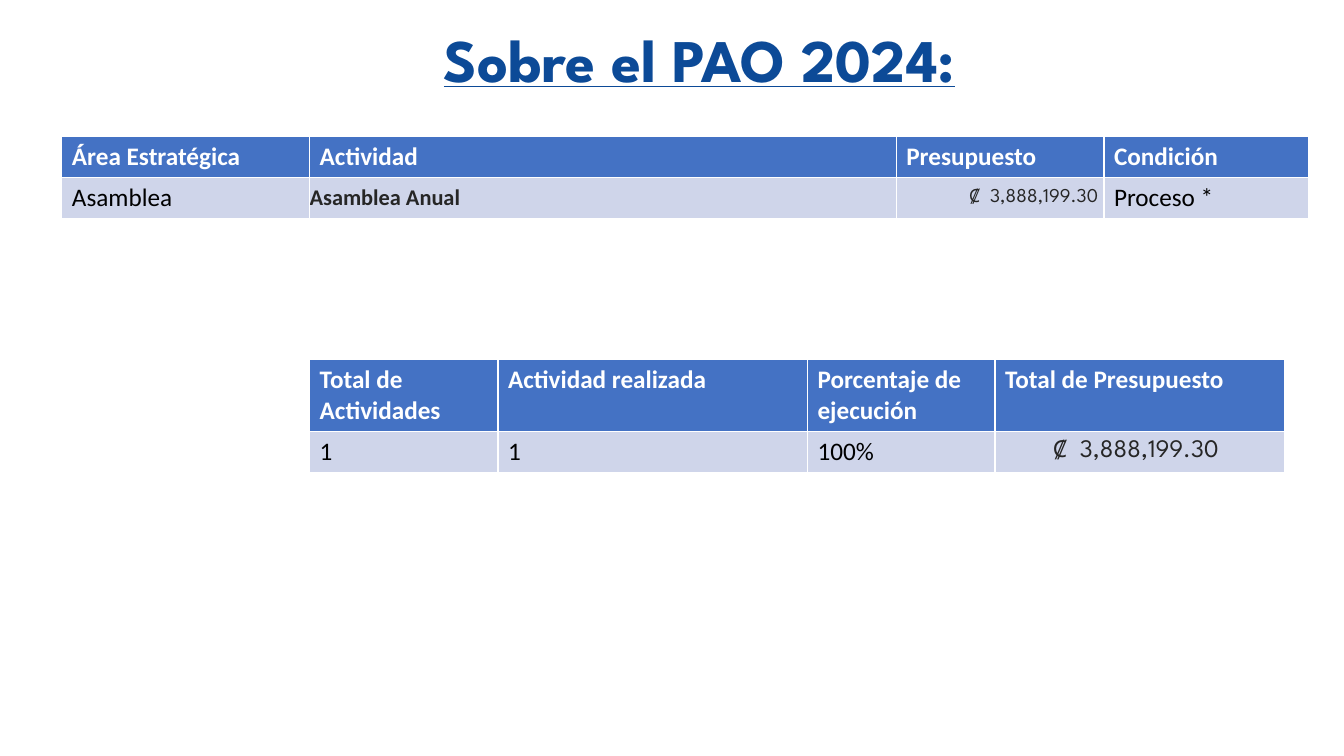
from pptx import Presentation
from pptx.dml.color import RGBColor
from pptx.enum.text import MSO_ANCHOR, MSO_AUTO_SIZE, PP_ALIGN
from pptx.util import Pt

TITLE_BLUE = RGBColor(0x0C, 0x4A, 0x97)
HEADER_BLUE = RGBColor(0x44, 0x72, 0xC4)
BAND_BLUE = RGBColor(0xCF, 0xD5, 0xEA)
WHITE = RGBColor(0xFF, 0xFF, 0xFF)
BLACK = RGBColor(0x00, 0x00, 0x00)
DARK_GREY = RGBColor(0x26, 0x26, 0x26)
BODY_FONT = "Calibri"
DISPLAY_FONT = "League Spartan"


def style_paragraph(paragraph, font_name, size, color, bold):
    paragraph.font.name = font_name
    paragraph.font.size = Pt(size)
    paragraph.font.color.rgb = color
    paragraph.font.bold = bold


def add_budget_table(left, top, widths, heights, rows):
    """Add a header row and a data row, and return the table."""
    table = slide.shapes.add_table(
        len(rows), len(widths), Pt(left), Pt(top), Pt(sum(widths)), Pt(sum(heights))
    ).table
    for column, width in zip(table.columns, widths):
        column.width = Pt(width)
    for r, texts in enumerate(rows):
        is_header = r == 0
        table.rows[r].height = Pt(heights[r])
        for c, text in enumerate(texts):
            cell = table.cell(r, c)
            cell.text = text
            cell.fill.solid()
            cell.fill.fore_color.rgb = HEADER_BLUE if is_header else BAND_BLUE
            style_paragraph(cell.text_frame.paragraphs[0], BODY_FONT, 18,
                            WHITE if is_header else BLACK, is_header)
    return table


presentation = Presentation()
presentation.slide_width = Pt(960)
presentation.slide_height = Pt(540)
slide = presentation.slides.add_slide(presentation.slide_layouts[5])

title = slide.shapes.title
title.left, title.top, title.width, title.height = Pt(139.7), Pt(16.6), Pt(720), Pt(55.4)
title.text_frame.text = "Sobre el PAO 2024:"
title.text_frame.auto_size = MSO_AUTO_SIZE.NONE
title.text_frame.vertical_anchor = MSO_ANCHOR.BOTTOM
heading = title.text_frame.paragraphs[0]
heading.alignment = PP_ALIGN.CENTER
heading.line_spacing = 0.9
style_paragraph(heading, DISPLAY_FONT, 43.2, TITLE_BLUE, True)
heading.font.underline = True

activities = add_budget_table(
    44.2, 97.5, [177, 419, 148.4, 146.2], [29.2, 29.2],
    [["Área Estratégica", "Actividad", "Presupuesto", "Condición"],
     ["Asamblea", "Asamblea Anual", "₡  3,888,199.30", "Proceso *"]],
)
totals = add_budget_table(
    221.2, 257, [134.6, 221, 134, 206.7], [50.8, 29.2],
    [["Total de Actividades", "Actividad realizada",
      "Porcentaje de ejecución", "Total de Presupuesto"],
     ["1", "1", "100%", "₡  3,888,199.30"]],
)

unpadded_cells = [
    (activities.cell(1, 1), BODY_FONT, 16, True, PP_ALIGN.LEFT, 0),
    (activities.cell(1, 2), DISPLAY_FONT, 14, False, PP_ALIGN.RIGHT, 4),
    (totals.cell(1, 3), DISPLAY_FONT, 18, False, PP_ALIGN.CENTER, 5),
]
for cell, font_name, size, bold, alignment, margin_right in unpadded_cells:
    cell.margin_left = cell.margin_top = cell.margin_bottom = 0
    cell.margin_right = Pt(margin_right)
    cell.vertical_anchor = MSO_ANCHOR.MIDDLE
    paragraph = cell.text_frame.paragraphs[0]
    paragraph.alignment = alignment
    style_paragraph(paragraph, font_name, size, DARK_GREY, bold)

presentation.save("out.pptx")
